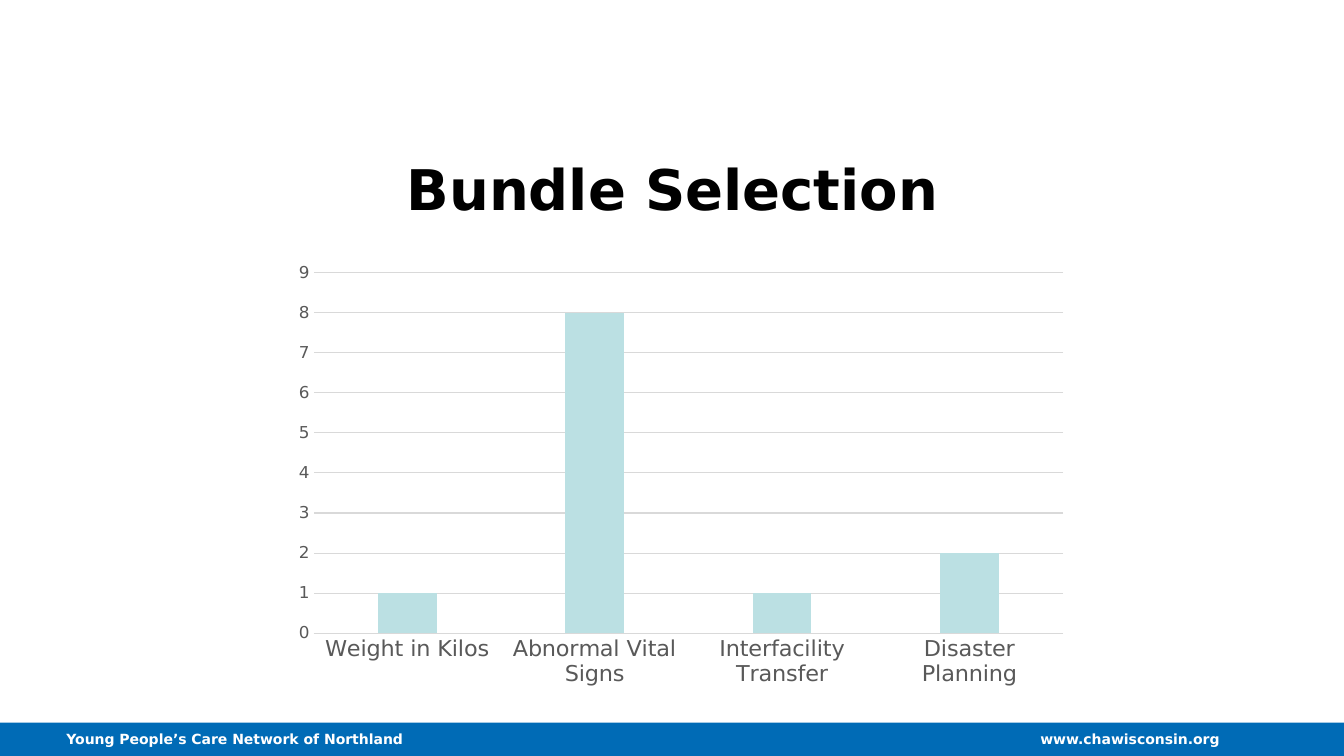
from lxml import etree
from pptx import Presentation
from pptx import util as u
from pptx.chart.data import CategoryChartData
from pptx.dml.color import RGBColor
from pptx.enum import chart as ch, shapes, text
from pptx.oxml.ns import qn

FONT = "DejaVu Sans"
COLORS = {"band": "006BB6", "bar": "BBE0E3", "grid": "D9D9D9",
          "label": "595959", "title": "000000", "white": "FFFFFF"}


def rgb(name):
    return RGBColor.from_string(COLORS[name])


def style_font(font, size, color, bold=False):
    font.name, font.size, font.bold = FONT, u.Pt(size), bold
    font.color.rgb = rgb(color)


def write(shape, words, size, color, bold=True, align=text.PP_ALIGN.LEFT,
          anchor=text.MSO_ANCHOR.TOP):
    tf = shape.text_frame
    tf.word_wrap = True
    tf.auto_size = text.MSO_AUTO_SIZE.NONE
    tf.vertical_anchor = anchor
    p = tf.paragraphs[0]
    p.alignment = align
    r = p.add_run()
    r.text = words
    style_font(r.font, size, color, bold)


def place(shape, box):
    shape.left, shape.top, shape.width, shape.height = map(u.Inches, box)


def add_title(s, box, words):
    place(s.shapes.title, box)
    write(s.shapes.title, words, 40, "title", align=text.PP_ALIGN.CENTER,
          anchor=text.MSO_ANCHOR.MIDDLE)


def add_footer(s, box):
    x, y, w, h = box
    band = s.shapes.add_shape(shapes.MSO_SHAPE.RECTANGLE, *map(u.Inches, box))
    band.shadow.inherit = False
    band.fill.solid()
    band.fill.fore_color.rgb = rgb("band")
    band.line.fill.background()
    for dx, width, words in (
            (0.56, 4.58, "Young People’s Care Network of Northland"),
            (10.22, 2.89, "www.chawisconsin.org")):
        sp = s.shapes.add_textbox(*map(u.Inches, (x + dx, y + 0.03, width, h - 0.06)))
        write(sp, words, 10, "white")


def set_plot_area(chart, x, y, w, h):
    """Fix the inner plot area as fractions of the chart."""
    area = chart._chartSpace.chart.plotArea
    for old in area.findall(qn("c:layout")):
        area.remove(old)
    layout = etree.Element(qn("c:layout"))
    manual = etree.SubElement(layout, qn("c:manualLayout"))
    for tag, val in (("layoutTarget", "inner"), ("xMode", "edge"), ("yMode", "edge"),
                     ("x", x), ("y", y), ("w", w), ("h", h)):
        etree.SubElement(manual, qn("c:" + tag)).set("val", str(val))
    area.insert(0, layout)


def add_bundle_chart(s, box):
    data = CategoryChartData()
    data.categories = ["Weight in Kilos", "Abnormal Vital Signs",
                       "Interfacility Transfer", "Disaster Planning"]
    data.add_series("Series 1", (1, 8, 1, 2))
    chart = s.shapes.add_chart(ch.XL_CHART_TYPE.COLUMN_CLUSTERED,
                               *map(u.Inches, box), data).chart
    chart.has_title = chart.has_legend = False
    style_font(chart.font, 10, "title")
    set_plot_area(chart, 0.042, 0.09, 0.946, 0.812)

    # Columns
    plot = chart.plots[0]
    plot.gap_width, plot.overlap = 219, -27
    plot.vary_by_categories = False
    fill = plot.series[0].format.fill
    fill.solid()
    fill.fore_color.rgb = rgb("bar")

    # Axes
    cat, val = chart.category_axis, chart.value_axis
    for axis, size in ((cat, 16), (val, 12)):
        axis.major_tick_mark = axis.minor_tick_mark = ch.XL_TICK_MARK.NONE
        style_font(axis.tick_labels.font, size, "label")
    val.minimum_scale, val.maximum_scale, val.major_unit = 0, 9, 1
    val.has_major_gridlines = True
    val.format.line.fill.background()
    for line in (cat.format.line, val.major_gridlines.format.line):
        line.color.rgb = rgb("grid")
        line.width = u.Pt(0.75)


def main():
    prs = Presentation()
    prs.slide_width, prs.slide_height = u.Inches(13.33), u.Inches(7.5)
    s = prs.slides.add_slide(prs.slide_layouts[5])
    add_footer(s, (0, 7.17, 13.33, 0.33))
    add_bundle_chart(s, (2.78, 2.31, 7.86, 4.5))
    add_title(s, (0.67, 1.33, 12, 1.08), "Bundle Selection")
    prs.save("out.pptx")


if __name__ == "__main__":
    main()
